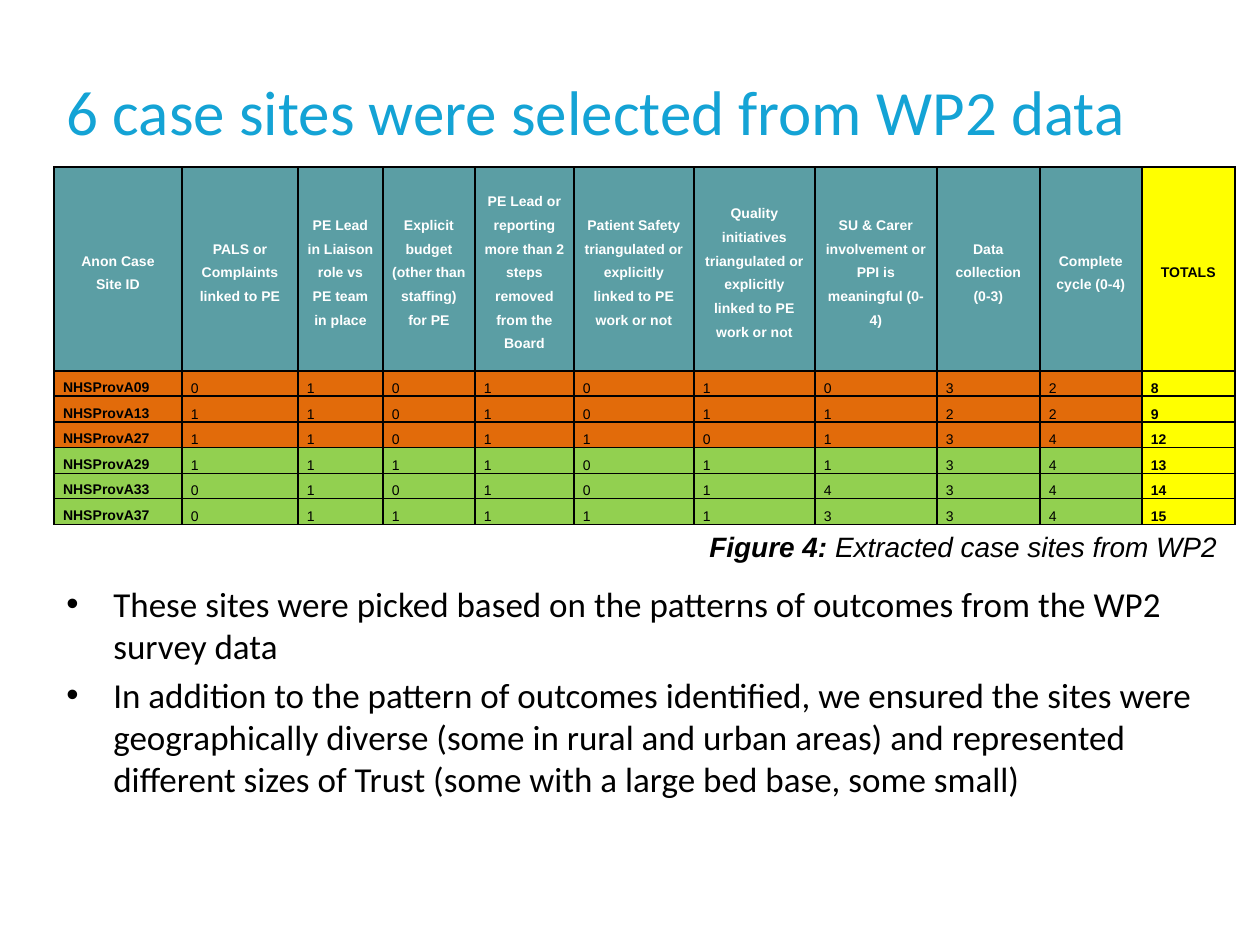
from dataclasses import dataclass

import pptx
import pptx.dml.color
import pptx.enum.text
import pptx.oxml
import pptx.oxml.ns
import pptx.util
from lxml import etree

ALIGN = pptx.enum.text.PP_ALIGN
ANCHOR = pptx.enum.text.MSO_ANCHOR
EMU_PER_PX = 914400 / 126

COLORS = {
    "title": "14A3D5",
    "text": "000000",
    "header": "5B9EA4",
    "header_text": "FFFFFF",
    "low": "E26B0A",
    "high": "92D050",
    "total": "FFFF00",
    "border": "000000",
}


@dataclass(frozen=True)
class Box:
    left: int
    top: int
    width: int
    height: int


@dataclass(frozen=True)
class Site:
    name: str
    scores: tuple[int, ...]
    total: int
    group: str


TITLE_BOX = Box(54, 66, 1160, 89)
TABLE_BOX = Box(54, 167, 1181, 357)
CAPTION_BOX = Box(697, 523, 538, 47)
BODY_BOX = Box(54, 576, 1160, 218)

COLUMN_WIDTHS = (128, 116, 85, 92, 99, 120, 121, 122, 103, 102, 93)
ROW_HEIGHTS = (204,) + (25, 26) * 3
CELL_MARGIN = 9
BULLET_INDENT = 47

HEADERS = (
    "Anon Case\nSite ID",
    "PALS or Complaints linked to PE",
    "PE Lead in Liaison role vs PE team in place",
    "Explicit budget (other than staffing) for PE",
    "PE Lead or reporting more than 2 steps removed from the Board",
    "Patient Safety triangulated or explicitly linked to PE work or not",
    "Quality initiatives triangulated or explicitly linked to PE work or not",
    "SU & Carer involvement or PPI is meaningful (0-4)",
    "Data collection (0-3)",
    "Complete cycle (0-4)",
    "TOTALS",
)
SITES = (
    Site("NHSProvA09", (0, 1, 0, 1, 0, 1, 0, 3, 2), 8, "low"),
    Site("NHSProvA13", (1, 1, 0, 1, 0, 1, 1, 2, 2), 9, "low"),
    Site("NHSProvA27", (1, 1, 0, 1, 1, 0, 1, 3, 4), 12, "low"),
    Site("NHSProvA29", (1, 1, 1, 1, 0, 1, 1, 3, 4), 13, "high"),
    Site("NHSProvA33", (0, 1, 0, 1, 0, 1, 4, 3, 4), 14, "high"),
    Site("NHSProvA37", (0, 1, 1, 1, 1, 1, 3, 3, 4), 15, "high"),
)
BULLETS = (
    "These sites were picked based on the patterns of outcomes from the WP2 survey data",
    "In addition to the pattern of outcomes identified, we ensured the sites were "
    "geographically diverse (some in rural and urban areas) and represented "
    "different sizes of Trust (some with a large bed base, some small)",
)


def px(length: int) -> int:
    return round(length * EMU_PER_PX)


def placed(box: Box) -> tuple[int, int, int, int]:
    return px(box.left), px(box.top), px(box.width), px(box.height)


def set_values(target, **values) -> None:
    for name, value in values.items():
        setattr(target, name, value)


def format_font(font, name: str, size: int, color: str = "text", **values) -> None:
    set_values(font, name=name, size=pptx.util.Pt(size), **values)
    font.color.rgb = pptx.dml.color.RGBColor.from_string(COLORS[color])


def add_title(slide, text: str) -> None:
    title = slide.shapes.title
    left, top, width, height = placed(TITLE_BOX)
    set_values(title, left=left, top=top, width=width, height=height)
    frame = title.text_frame
    frame.text = text
    set_values(frame, word_wrap=True, vertical_anchor=ANCHOR.TOP,
               auto_size=pptx.enum.text.MSO_AUTO_SIZE.NONE)
    paragraph = frame.paragraphs[0]
    paragraph.alignment = ALIGN.LEFT
    format_font(paragraph.runs[0].font, "Calibri", 36, "title")


def add_bullet(paragraph) -> None:
    properties = paragraph._p.get_or_add_pPr()
    properties.set("marL", str(px(BULLET_INDENT)))
    properties.set("indent", str(-px(BULLET_INDENT)))
    for tag, key, value in (("a:buFont", "typeface", "Arial"), ("a:buChar", "char", "•")):
        etree.SubElement(properties, pptx.oxml.ns.qn(tag)).set(key, value)


def add_body(slide) -> None:
    frame = slide.shapes.add_textbox(*placed(BODY_BOX)).text_frame
    frame.word_wrap = True
    frame.text = "\n".join(BULLETS)
    for index, paragraph in enumerate(frame.paragraphs):
        add_bullet(paragraph)
        if index:
            paragraph.space_before = pptx.util.Pt(4)
        format_font(paragraph.runs[0].font, "Calibri", 20)


def add_caption(slide) -> None:
    frame = slide.shapes.add_textbox(*placed(CAPTION_BOX)).text_frame
    set_values(frame, word_wrap=True, vertical_anchor=ANCHOR.MIDDLE,
               auto_size=pptx.enum.text.MSO_AUTO_SIZE.SHAPE_TO_FIT_TEXT)
    paragraph = frame.paragraphs[0]
    paragraph.alignment = ALIGN.JUSTIFY
    for text, bold in (("Figure 4: ", True), ("Extracted case sites from WP2", False)):
        run = paragraph.add_run()
        run.text = text
        format_font(run.font, "Arial", 16, bold=bold, italic=True)


def add_borders(cell) -> None:
    properties = cell._tc.get_or_add_tcPr()
    for side in "LRTB":
        properties.append(pptx.oxml.parse_xml(
            f'<a:ln{side} {pptx.oxml.ns.nsdecls("a")} w="12700"><a:solidFill>'
            f'<a:srgbClr val="{COLORS["border"]}"/></a:solidFill></a:ln{side}>'))


def fill_cell(cell, text: str, fill: str, color: str, bold: bool,
              alignment: ALIGN, anchor: ANCHOR) -> None:
    cell.text = text
    set_values(cell, vertical_anchor=anchor, margin_top=0, margin_bottom=0,
               margin_left=px(CELL_MARGIN), margin_right=px(CELL_MARGIN))
    add_borders(cell)
    cell.fill.solid()
    cell.fill.fore_color.rgb = pptx.dml.color.RGBColor.from_string(COLORS[fill])
    for paragraph in cell.text_frame.paragraphs:
        set_values(paragraph, alignment=alignment, line_spacing=1.5)
        format_font(paragraph.runs[0].font, "Arial", 8, color, bold=bold)


def add_site_table(slide) -> None:
    table = slide.shapes.add_table(
        len(ROW_HEIGHTS), len(COLUMN_WIDTHS), *placed(TABLE_BOX)).table
    set_values(table, first_row=False, horz_banding=False)
    for column, width in zip(table.columns, COLUMN_WIDTHS):
        column.width = px(width)
    for row, height in zip(table.rows, ROW_HEIGHTS):
        row.height = px(height)

    last = len(HEADERS) - 1
    for index, text in enumerate(HEADERS):
        fill, color = ("total", "text") if index == last else ("header", "header_text")
        fill_cell(table.cell(0, index), text, fill, color, True, ALIGN.CENTER, ANCHOR.MIDDLE)
    for row_index, site in enumerate(SITES, start=1):
        for index, value in enumerate((site.name, *site.scores, site.total)):
            fill_cell(table.cell(row_index, index), str(value),
                      "total" if index == last else site.group, "text",
                      index in (0, last), ALIGN.JUSTIFY,
                      ANCHOR.BOTTOM if index else ANCHOR.MIDDLE)


def main() -> None:
    presentation = pptx.Presentation()
    set_values(presentation, slide_width=px(1260), slide_height=px(945))
    slide = presentation.slides.add_slide(presentation.slide_layouts[5])
    add_body(slide)
    add_title(slide, "6 case sites were selected from WP2 data")
    add_site_table(slide)
    add_caption(slide)
    presentation.save("out.pptx")


if __name__ == "__main__":
    main()
